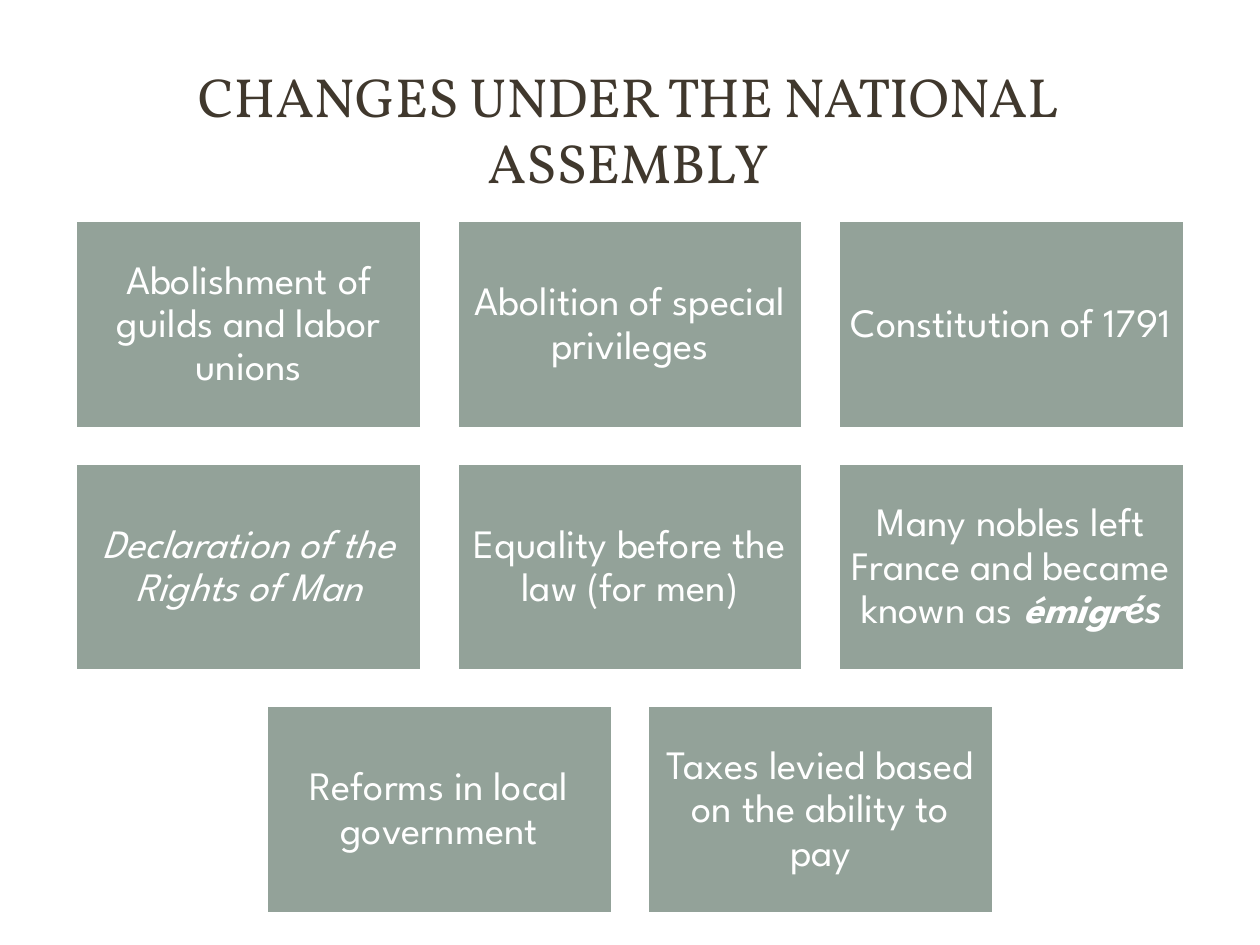
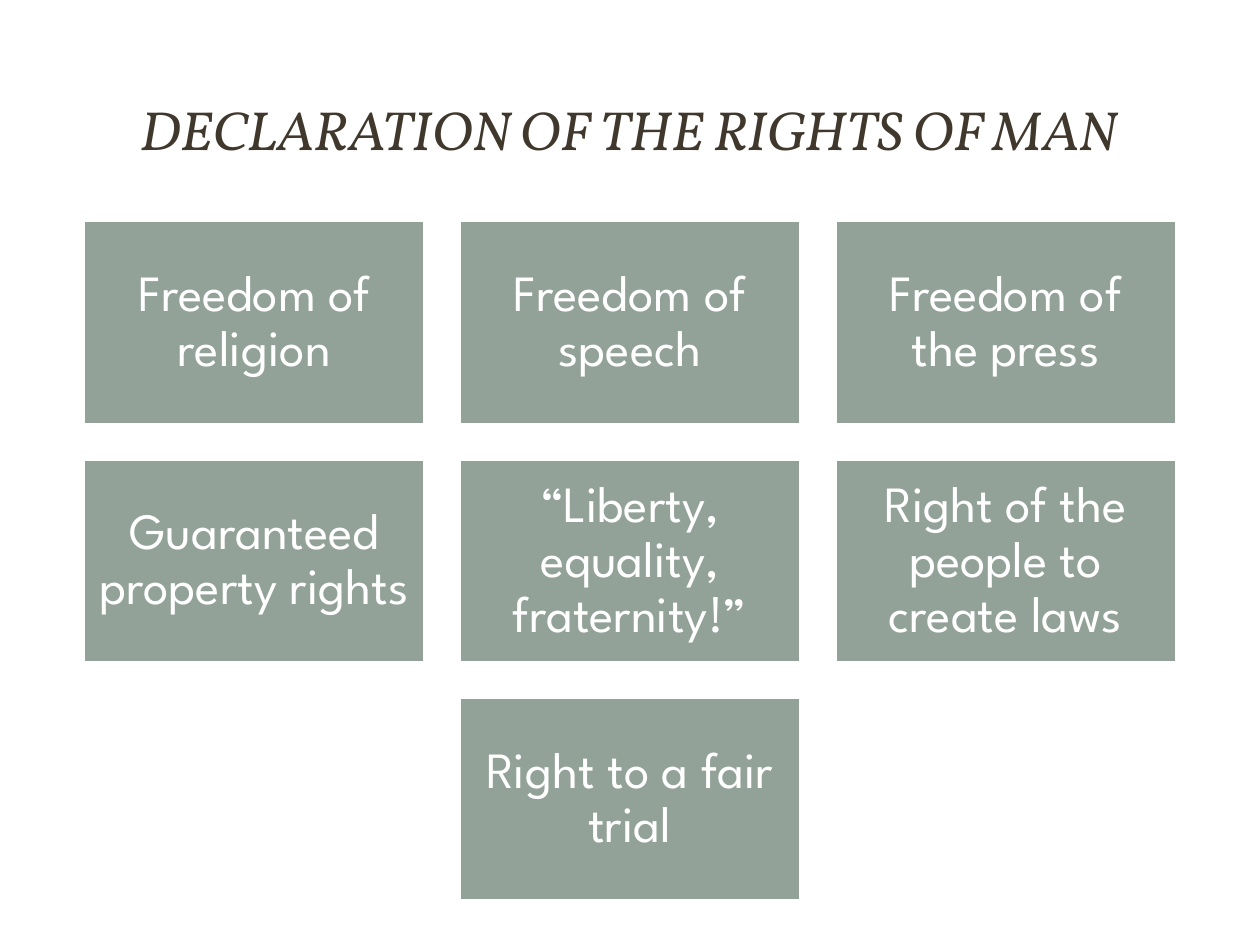
from dataclasses import dataclass
from typing import NamedTuple

from pptx import Presentation
from pptx.dml.color import RGBColor
from pptx.enum.shapes import MSO_SHAPE as Shape
from pptx.enum.text import MSO_ANCHOR as Anchor, MSO_AUTO_SIZE as Fit, PP_ALIGN as Align
from pptx.util import Emu, Pt

# Shared look: 100 px to the inch
SCALE = 9144
WIDE, HIGH = 1000, 750
TOP = 175
COLS = 3
WHITE, SAGE, BROWN = "FFFFFF", "93A299", "40382D"
HEAD, BODY = "Vollkorn", "League Spartan"


class Bit(NamedTuple):
    text: str
    style: dict = {}


@dataclass
class Page:
    title: Bit
    tiles: list[list[Bit]]
    wide: int
    high: int
    inset: int
    size: int


ITALIC = {"italic": True}
STRONG = {"bold": True, "italic": True}

PAGES = [
    Page(
        Bit("CHANGES UNDER THE NATIONAL ASSEMBLY"),
        [
            [Bit("Abolishment of guilds and labor unions")],
            [Bit("Abolition of special privileges")],
            [Bit("Constitution of 1791")],
            [Bit("Declaration of the Rights of Man", ITALIC)],
            [Bit("Equality before the law (for men)")],
            [
                Bit("Many nobles left France and became known as "),
                Bit("émigr", STRONG),
                Bit("és", STRONG | {"name": "Calibri"}),
            ],
            [Bit("Reforms in local government")],
            [Bit("Taxes levied based on the ability to pay")],
        ],
        wide=275, high=165, inset=9, size=23,
    ),
    Page(
        Bit("DECLARATION OF THE RIGHTS OF MAN", ITALIC),
        [
            [Bit("Freedom of religion")],
            [Bit("Freedom of speech")],
            [Bit("Freedom of the press")],
            [Bit("Guaranteed property rights")],
            [Bit("“Liberty, equality, fraternity!”")],
            [Bit("Right of the people to create laws")],
            [Bit("Right to a fair trial")],
        ],
        wide=271, high=162, inset=12, size=29,
    ),
]


def px(length: float) -> Emu:
    return Emu(round(length * SCALE))


def color(code: str) -> RGBColor:
    return RGBColor.from_string(code)


def write(shape, bits: list[Bit], base: dict, ink: str, inset: dict, space: float) -> None:
    """Fill a shape with one centred paragraph of styled runs."""
    frame = shape.text_frame
    look = {"word_wrap": True, "auto_size": Fit.NONE, "vertical_anchor": Anchor.MIDDLE}
    for key, value in (look | inset).items():
        setattr(frame, key, value)
    para = frame.paragraphs[0]
    para.alignment = Align.CENTER
    para.line_spacing = space
    for bit in bits:
        run = para.add_run()
        run.text = bit.text
        for key, value in (base | bit.style).items():
            setattr(run.font, key, value)
        run.font.color.rgb = color(ink)


def add_title(slide, bit: Bit) -> None:
    title = slide.shapes.title
    place = {"left": 47, "top": 45, "width": 903, "height": 114}
    for key, value in place.items():
        setattr(title, key, px(value))
    write(title, [bit], {"name": HEAD, "size": Pt(31.5)}, BROWN, {}, 1.0)


def add_tile(slide, page: Page, left: float, top: float, bits: list[Bit]) -> None:
    tile = slide.shapes.add_shape(
        Shape.RECTANGLE, px(left), px(top), px(page.wide), px(page.high)
    )
    tile.shadow.inherit = False
    tile.fill.solid()
    tile.fill.fore_color.rgb = color(SAGE)
    tile.line.color.rgb = color(WHITE)
    tile.line.width = Pt(2)
    sides = ("left", "top", "right", "bottom")
    inset = {f"margin_{side}": px(page.inset) for side in sides}
    write(tile, bits, {"name": BODY, "size": Pt(page.size)}, WHITE, inset, 0.9)


def add_grid(slide, page: Page) -> None:
    """Set tiles in rows, each row centred, with gaps a tenth of a tile wide."""
    gap = page.wide / 10
    for start in range(0, len(page.tiles), COLS):
        row = page.tiles[start:start + COLS]
        left = (WIDE - len(row) * (page.wide + gap) + gap) / 2
        top = TOP + start // COLS * (page.high + gap)
        for col, bits in enumerate(row):
            add_tile(slide, page, left + col * (page.wide + gap), top, bits)


def main() -> None:
    deck = Presentation()
    deck.slide_width, deck.slide_height = px(WIDE), px(HIGH)
    layout = deck.slide_layouts.get_by_name("Title Only")
    for page in PAGES:
        slide = deck.slides.add_slide(layout)
        add_title(slide, page.title)
        add_grid(slide, page)
    deck.save("out.pptx")


if __name__ == "__main__":
    main()
